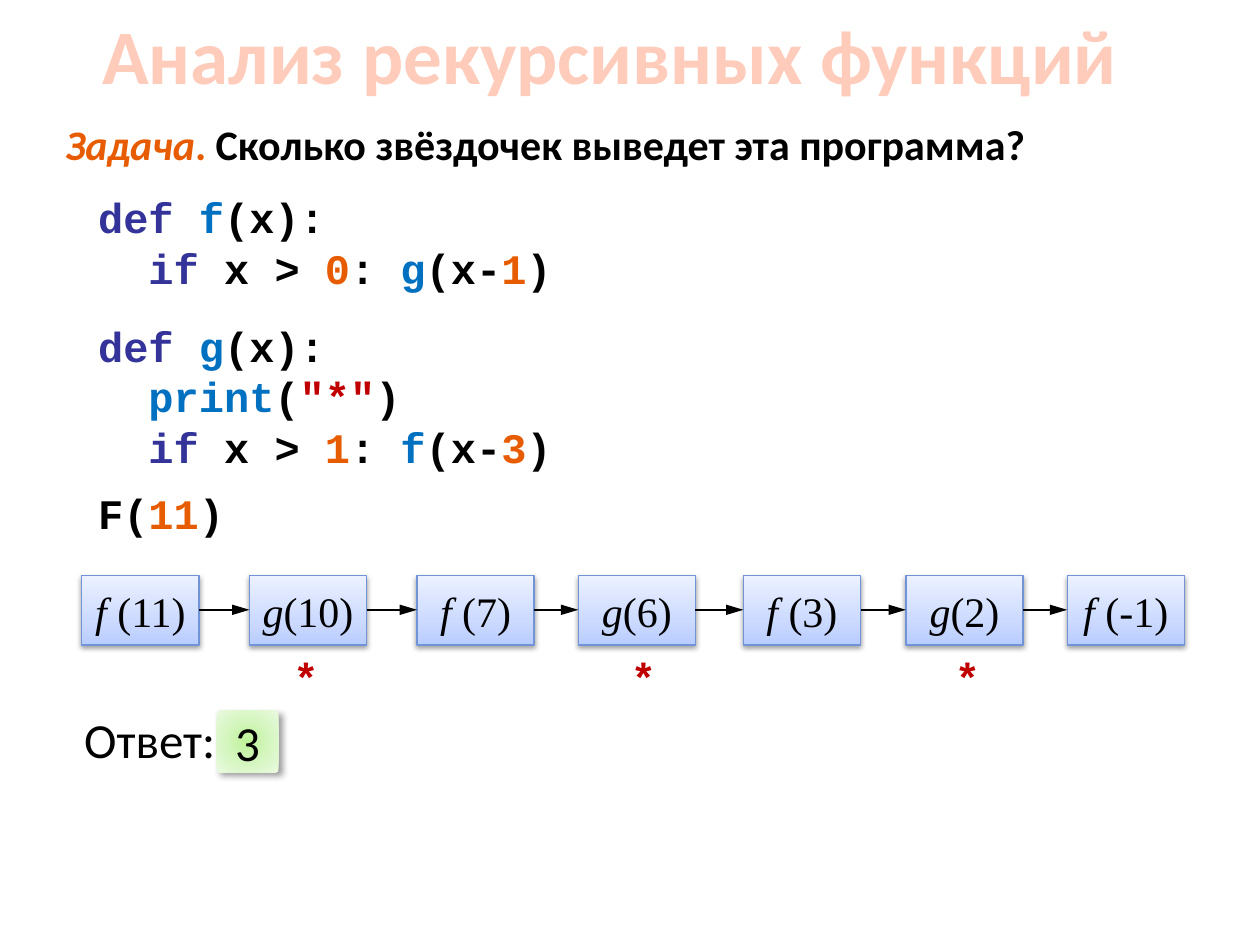
from lxml import etree
from pptx import Presentation
from pptx.dml.color import RGBColor
from pptx.enum.shapes import MSO_CONNECTOR, MSO_SHAPE
from pptx.enum.text import MSO_ANCHOR, PP_ALIGN
from pptx.oxml import parse_xml
from pptx.oxml.ns import qn
from pptx.util import Inches, Pt

RECT, STRAIGHT = MSO_SHAPE.RECTANGLE, MSO_CONNECTOR.STRAIGHT
MIDDLE, TOP = MSO_ANCHOR.MIDDLE, MSO_ANCHOR.TOP
CENTER, LEFT = PP_ALIGN.CENTER, PP_ALIGN.LEFT
A = "http://schemas.openxmlformats.org/drawingml/2006/main"

THEME = {
    "title": "FFCCBB", "text": "000000", "accent": "E75C01", "keyword": "333399",
    "name": "0070C0", "string": "C00000", "box_line": "7094D7",
    "box_fill": [(0, "B8CCFF"), (35, "CCDAFF"), (100, "EBF1FF")],
    "answer_fill": [(0, "BEF297"), (50, "D5F6C0"), (100, "EAFAE0")],
    "title_size": 44, "size": 24, "answer_size": 28,
    "sans": "Calibri", "mono": "Courier New", "serif": "Times New Roman",
}


def write(p, text, color="text", size="size", font="sans", bold=False, italic=False):
    r = p.add_run()
    r.text = text
    r.font.name = THEME[font]
    r.font.size = Pt(THEME[size])
    r.font.bold, r.font.italic = bold, italic
    r.font.color.rgb = RGBColor.from_string(THEME[color])


def shade(sp, stops, direction, alpha, blur, dist, angle):
    """Give a shape a gradient fill and an outer shadow."""
    stop_xml = "".join(f'<a:gs pos="{pos * 1000}"><a:srgbClr val="{c}"/></a:gs>' for pos, c in stops)
    grad = parse_xml(f'<a:gradFill xmlns:a="{A}" rotWithShape="1"><a:gsLst>{stop_xml}</a:gsLst>'
                     f'{direction}</a:gradFill>')
    sp._element.spPr.find(qn("a:prstGeom")).addnext(grad)
    sp.shadow.inherit = False
    sp._element.spPr.find(qn("a:effectLst")).append(parse_xml(
        f'<a:outerShdw xmlns:a="{A}" blurRad="{Pt(blur)}" dist="{Pt(dist)}" dir="{angle * 60000}" '
        f'rotWithShape="0"><a:srgbClr val="000000"><a:alpha val="{alpha * 1000}"/></a:srgbClr>'
        '</a:outerShdw>'))


prs = Presentation()
prs.slide_width, prs.slide_height = Inches(10), Inches(7.5)
s = prs.slides.add_slide(prs.slide_layouts[5])

# Title
title = s.shapes.title
title.left, title.top, title.width, title.height = 0, 0, Inches(9.69), Inches(0.85)
title.text_frame.vertical_anchor = MIDDLE
p = title.text_frame.paragraphs[0]
p.alignment = CENTER
write(p, "Анализ рекурсивных функций", color="title", size="title_size", bold=True)

# Task
tf = s.shapes.add_textbox(Inches(0.42), Inches(0.89), Inches(9.27), Inches(0.51)).text_frame
tf.word_wrap = True
p = tf.paragraphs[0]
write(p, "Задача", color="accent", bold=True, italic=True)
write(p, ". ", color="accent", bold=True)
write(p, "Сколько звёздочек выведет эта программа?", bold=True)

# Program: (indent level, space before in points, coloured pieces)
code = [
    (0, 0, [("def ", "keyword"), ("f", "name"), ("(x):", "text")]),
    (1, 0, [("if", "keyword"), (" x > ", "text"), ("0", "accent"), (": ", "text"),
            ("g", "name"), ("(x-", "text"), ("1", "accent"), (")", "text")]),
    (0, 16, [("def ", "keyword"), ("g", "name"), ("(x):", "text")]),
    (1, 0, [("print", "name"), ("(", "text"), ('"*"', "string"), (")", "text")]),
    (1, 0, [("if", "keyword"), (" x > ", "text"), ("1", "accent"), (": ", "text"),
            ("f", "name"), ("(x-", "text"), ("3", "accent"), (")", "text")]),
    (0, 9, [("F(", "text"), ("11", "accent"), (")", "text")]),
]
tf = s.shapes.add_textbox(Inches(0.58), Inches(1.43), Inches(5.32), Inches(2.93)).text_frame
tf.word_wrap = True
tf.vertical_anchor = MIDDLE
for i, (level, before, pieces) in enumerate(code):
    p = tf.add_paragraph() if i else tf.paragraphs[0]
    p.line_spacing, p.space_before = Pt(28.8), Pt(before)
    p._p.get_or_add_pPr().set("marL", str(Inches(0.1 + 0.4 * level)))
    for text, color in pieces:
        write(p, text, color=color, font="mono", bold=True)

# Chain of calls: (left, function, argument, left of the star below)
calls = [
    (0.65, "f ", "(11)", None), (1.98, "g", "(10)", 2.23), (3.31, "f ", "(7)", None),
    (4.59, "g", "(6)", 4.91), (5.9, "f ", "(3)", None), (7.19, "g", "(2)", 7.48),
    (8.47, "f ", "(-1)", None),
]
BOX_W, BOX_TOP, BOX_H, ARROW_Y = 0.93, 4.57, 0.55, 4.84
for i, (left, function, argument, star) in enumerate(calls):
    sp = s.shapes.add_shape(RECT, Inches(left), Inches(BOX_TOP), Inches(BOX_W), Inches(BOX_H))
    sp.line.color.rgb = RGBColor.from_string(THEME["box_line"])
    sp.line.width = Pt(0.75)
    shade(sp, THEME["box_fill"], '<a:lin ang="16200000" scaled="0"/>', 38, 3.1, 1.6, 90)
    tf = sp.text_frame
    tf.word_wrap = False
    tf.vertical_anchor = MIDDLE
    p = tf.paragraphs[0]
    p.alignment = CENTER
    write(p, function, font="serif", italic=True)
    write(p, argument, font="serif")

    if i:
        arrow = s.shapes.add_connector(STRAIGHT, Inches(calls[i - 1][0] + BOX_W), Inches(ARROW_Y),
                                       Inches(left), Inches(ARROW_Y))
        arrow.line.color.rgb = RGBColor.from_string(THEME["text"])
        arrow.line.width = Pt(1)
        etree.SubElement(arrow.line._get_or_add_ln(), qn("a:tailEnd"), type="triangle", w="med", len="lg")
        etree.SubElement(arrow._element.spPr, qn("a:effectLst"))

    if star is not None:
        tf = s.shapes.add_textbox(Inches(star), Inches(5.12), Inches(0.4), Inches(0.5)).text_frame
        tf.word_wrap = False
        write(tf.paragraphs[0], "*", color="string", font="mono", bold=True)

# Answer
sp = s.shapes.add_shape(RECT, Inches(1.72), Inches(5.64), Inches(0.49), Inches(0.49))
sp.line.fill.background()
shade(sp, THEME["answer_fill"],
      '<a:path path="circle"><a:fillToRect l="50000" t="50000" r="50000" b="50000"/></a:path>',
      40, 4, 3, 45)
label = s.shapes.add_textbox(Inches(0.57), Inches(5.58), Inches(1.25), Inches(0.57))
for shape, text, align, anchor in ((label, "Ответ:", LEFT, TOP), (sp, "3", CENTER, MIDDLE)):
    tf = shape.text_frame
    tf.word_wrap = False
    tf.vertical_anchor = anchor
    p = tf.paragraphs[0]
    p.alignment = align
    write(p, text, size="answer_size")

prs.save("out.pptx")
